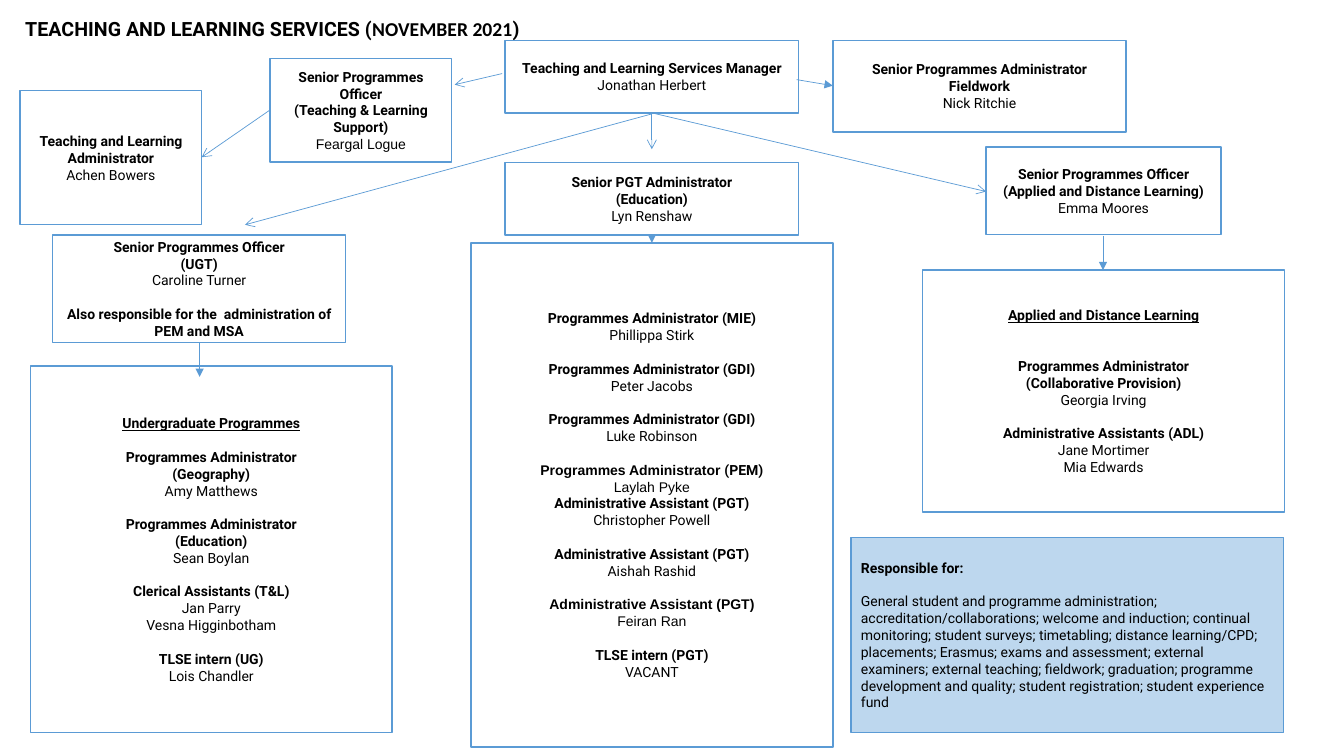
import pptx
import pptx.dml.color
import pptx.enum.shapes
import pptx.enum.text
import pptx.oxml.ns
import pptx.util
from lxml import etree

BLUE = pptx.dml.color.RGBColor(0x5B, 0x9B, 0xD5)
PALE_BLUE = pptx.dml.color.RGBColor(0xBD, 0xD7, 0xEE)
BLACK = pptx.dml.color.RGBColor(0, 0, 0)
CENTER = pptx.enum.text.PP_ALIGN.CENTER
LEFT = pptx.enum.text.PP_ALIGN.LEFT
GROUP_GAP = pptx.util.Pt(12)

# The first character of each piece of text picks its style
STYLES = {
    "*": dict(bold=True),                    # role
    "_": dict(bold=True, underline=True),    # heading
    ".": dict(),                             # name or plain text
    "#": dict(bold=True, font="Arial"),      # role in Arial
    "-": dict(font="Arial"),                 # name in Arial
}

presentation = pptx.Presentation()
presentation.slide_width = pptx.util.Inches(13.33)
presentation.slide_height = pptx.util.Inches(7.5)
slide = presentation.slides.add_slide(presentation.slide_layouts[5])

# Grid of square cells
COLUMN = presentation.slide_width / 133.3
ROW = presentation.slide_height / 75


def place(column, row):
    return round(column * COLUMN), round(row * ROW)


def write(paragraph, text, size=10, font="Roboto", bold=False, underline=False):
    run = paragraph.add_run()
    run.text = text
    run.font.size = pptx.util.Pt(size)
    run.font.name = font
    run.font.bold = bold
    run.font.underline = underline
    run.font.color.rgb = BLACK


# Title
title = slide.shapes.title
title.left, title.top = place(1.5, 1.2)
title.width, title.height = place(97.9, 5)
title.text_frame.auto_size = pptx.enum.text.MSO_AUTO_SIZE.NONE
title.text_frame.vertical_anchor = pptx.enum.text.MSO_ANCHOR.TOP
heading = title.text_frame.paragraphs[0]
heading.alignment = LEFT
write(heading, "TEACHING AND LEARNING SERVICES (", size=14, bold=True)
write(heading, "NOVEMBER 2021", size=14, bold=True, font="Calibri")
write(heading, ")", size=14, bold=True)

# Boxes: left, top, width, height, then groups of lines; "|" splits a line into runs
MANAGER_LEFT, MANAGER_WIDTH = 50.1, 29.1
TEAM_WIDTH = 35.9
boxes = [
    (MANAGER_LEFT, 4, MANAGER_WIDTH, 7.2, [
        ["*Teaching and Learning Services Manager", ".Jonathan Herbert"]]),
    (82.6, 4, MANAGER_WIDTH, 9.1, [
        ["*Senior Programmes Administrator Fieldwork", ".Nick Ritchie"]]),
    (26.8, 5.8, 18, 10.3, [
        ["*Senior Programmes Officer", "*(Teaching & Learning Support)", "-Feargal Logue"]]),
    (2, 9, 18, 13.3, [
        ["*Teaching and Learning Administrator", ".Achen Bowers"]]),
    (MANAGER_LEFT, 16.1, MANAGER_WIDTH, 7.2, [
        ["*Senior PGT Administrator", "*(Education)", ".Lyn Renshaw"]]),
    (97.8, 14.6, 23.3, 8.7, [
        ["*Senior Programmes Officer (Applied and Distance Learning)", ".Emma Moores"]]),
    (5.2, 23.3, MANAGER_WIDTH, 10.7, [
        ["*Senior Programmes Officer", "*(UGT)", ".Caroline Turner"],
        ["*Also responsible for the  administration of PEM and MSA"]]),
    (3, 36.3, TEAM_WIDTH, 36.4, [
        ["_Undergraduate Programmes"],
        ["*Programmes Administrator", "*(Geography)", ".Amy Matthews"],
        ["*Programmes Administrator", "*(Education)", ".Sean Boylan"],
        ["*Clerical Assistants (T&L)", ".Jan Parry", ".Vesna Higginbotham"],
        ["*TLSE intern (UG)", ".Lois Chandler"]]),
    (46.7, 24.1, TEAM_WIDTH, 50, [
        ["*Programmes Administrator (MIE)", ".Phillippa Stirk"],
        ["*Programmes Administrator (GDI)", ".Peter Jacobs"],
        ["*Programmes Administrator (GDI)", ".Luke Robinson"],
        ["#Programmes Administrator |*(PEM)", "-Laylah Pyke",
         "*Administrative Assistant (PGT)", ".Christopher Powell"],
        ["*Administrative Assistant (PGT)", ".Aishah Rashid"],
        ["#Administrative Assistant (PGT)", "-Feiran Ran"],
        ["*TLSE intern (PGT)", ".VACANT"]]),
    (91.5, 26.8, TEAM_WIDTH, 24, [
        ["_Applied and Distance Learning"],
        [],
        ["*Programmes Administrator", "*(Collaborative Provision)", ".Georgia Irving"],
        ["*Administrative Assistants (ADL)", ".Jane Mortimer", ".Mia Edwards"]]),
    (84.4, 53.3, 42.9, 19.4, [
        ["*Responsible for:"],
        [".General student and programme administration; accreditation/collaborations; "
         "welcome and induction; continual monitoring; student surveys; timetabling; "
         "distance learning/CPD; placements; Erasmus; exams and assessment; external "
         "examiners; external teaching; fieldwork; graduation; programme development "
         "and quality; student registration; student experience fund"]]),
]
for left, top, width, height, groups in boxes:
    is_summary = groups[0][0] == "*Responsible for:"
    shape = slide.shapes.add_shape(pptx.enum.shapes.MSO_SHAPE.RECTANGLE,
                                   *place(left, top), *place(width, height))
    shape.shadow.inherit = False
    shape.line.color.rgb = BLUE
    shape.line.width = pptx.util.Pt(1)
    if is_summary:
        shape.fill.solid()
        shape.fill.fore_color.rgb = PALE_BLUE
    else:
        shape.fill.background()
    frame = shape.text_frame
    frame.word_wrap = True
    frame.vertical_anchor = pptx.enum.text.MSO_ANCHOR.MIDDLE
    paragraph = None
    gaps = 0
    for group in groups:
        for line in group:
            paragraph = frame.add_paragraph() if paragraph else frame.paragraphs[0]
            paragraph.alignment = LEFT if is_summary else CENTER
            paragraph.space_before = GROUP_GAP * gaps
            gaps = 0
            for piece in line.split("|"):
                write(paragraph, piece[1:], **STYLES[piece[0]])
        gaps += 1

# Arrows: start column and row, end column and row, head
MIDDLE = MANAGER_LEFT + MANAGER_WIDTH / 2
arrows = [
    (79, 7.9, 82.6, 8.5, "triangle"),
    (MIDDLE, 23.4, MIDDLE, 24.1, "triangle"),
    (19.8, 34, 19.8, 37.4, "triangle"),
    (109.4, 23.4, 109.4, 26.8, "triangle"),
    (49.8, 7.3, 45.1, 8.4, "arrow"),
    (MIDDLE, 11.2, MIDDLE, 14.8, "arrow"),
    (MIDDLE, 11.2, 97.8, 19, "arrow"),
    (MIDDLE, 11.3, 24.3, 22.3, "arrow"),
    (26.8, 10.9, 20, 15.6, "arrow"),
]
for start_column, start_row, end_column, end_row, head in arrows:
    connector = slide.shapes.add_connector(pptx.enum.shapes.MSO_CONNECTOR.STRAIGHT,
                                           *place(start_column, start_row),
                                           *place(end_column, end_row))
    connector.line.color.rgb = BLUE
    connector.line.width = pptx.util.Pt(0.5)
    properties = connector.element.spPr
    etree.SubElement(properties.find(pptx.oxml.ns.qn("a:ln")),
                     pptx.oxml.ns.qn("a:tailEnd"), type=head)
    etree.SubElement(properties, pptx.oxml.ns.qn("a:effectLst"))

presentation.save("out.pptx")
